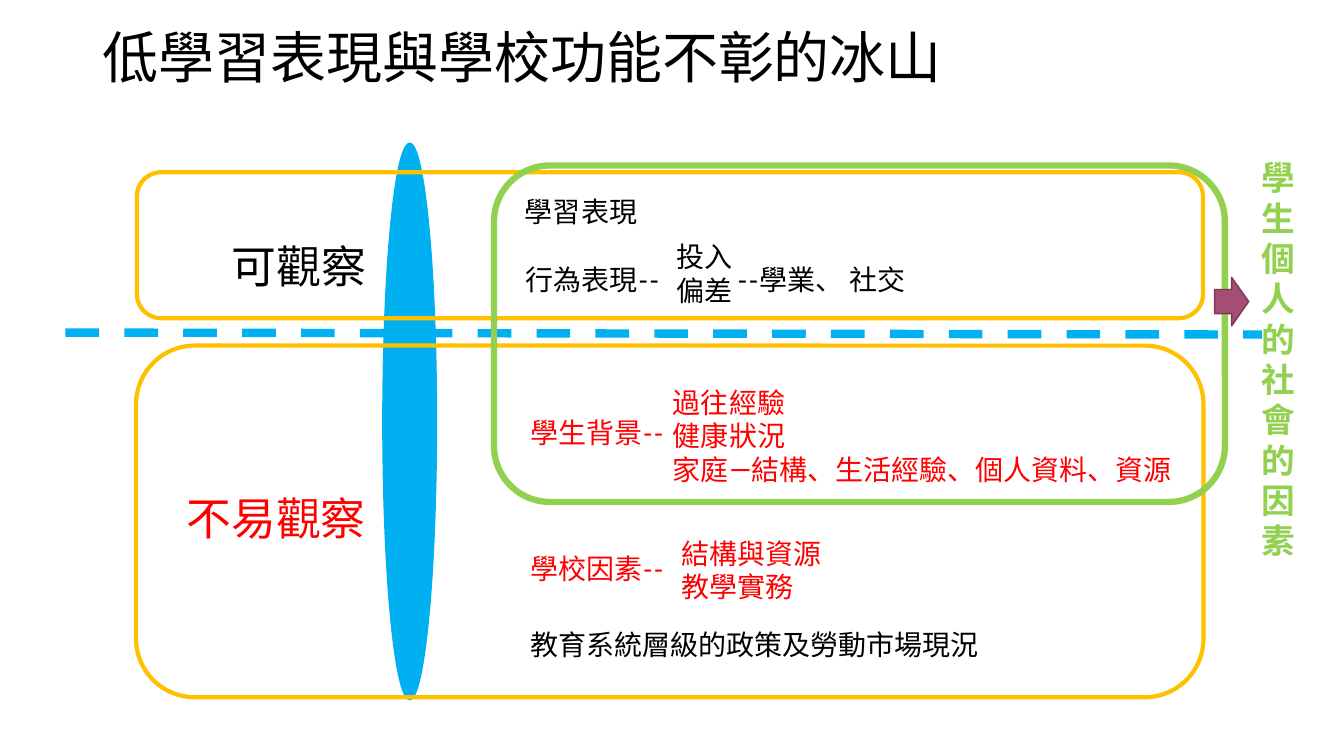
from dataclasses import dataclass
from itertools import groupby

from lxml import etree
from pptx import Presentation
from pptx.dml.color import RGBColor
from pptx.enum.dml import MSO_LINE
from pptx.enum.shapes import MSO_CONNECTOR, MSO_SHAPE
from pptx.enum.text import MSO_ANCHOR
from pptx.oxml.ns import qn
from pptx.util import Cm, Pt

ELLIPSE = MSO_SHAPE.OVAL
ROUNDED = MSO_SHAPE.ROUNDED_RECTANGLE
ARROW = MSO_SHAPE.RIGHT_ARROW
STRAIGHT = MSO_CONNECTOR.STRAIGHT
DASH = MSO_LINE.DASH
MIDDLE = MSO_ANCHOR.MIDDLE
TOP = MSO_ANCHOR.TOP


@dataclass(frozen=True)
class Theme:
    black: str = "000000"
    red: str = "FF0000"
    blue: str = "00B0F0"
    gold: str = "FFC000"
    green: str = "92D050"
    plum: str = "A54D74"
    dark_plum: str = "7A3956"
    title_size: int = 40
    heading_size: int = 32
    side_size: int = 24
    body_size: int = 20
    title_font: str = "Noto Sans CJK JP"
    heading_font: str = "Noto Sans CJK SC"
    body_font: str = "Roboto Slab"
    mark_font: str = "Noto Sans CJK TC"


THEME = Theme()


def add_span(para, text, font, size, color, bold):
    span = para.add_run()
    span.text = text
    span.font.name = font
    span.font.size = Pt(size)
    span.font.bold = bold
    span.font.color.rgb = RGBColor.from_string(color)
    east_asian = etree.SubElement(span.font._element, qn("a:ea"))
    east_asian.set("typeface", font)


def add_text(page, place, lines, color=THEME.black, size=THEME.body_size,
             font=THEME.body_font, bold=False, anchor=TOP):
    box = page.shapes.add_textbox(*map(Cm, place))
    frame = box.text_frame
    frame.word_wrap = True
    frame.vertical_anchor = anchor
    for index, line in enumerate(lines):
        para = frame.paragraphs[0] if index == 0 else frame.add_paragraph()
        for is_mark, letters in groupby(line, lambda letter: letter in "、 "):
            span_font = THEME.mark_font if is_mark else font
            add_span(para, "".join(letters), span_font, size, color, bold)
    return box


def add_heading(page, place, text, color):
    add_text(page, place, [text], color, THEME.heading_size, THEME.heading_font)


def add_tab_stop(box, position):
    properties = box.text_frame.paragraphs[0]._p.get_or_add_pPr()
    stops = etree.SubElement(properties, qn("a:tabLst"))
    etree.SubElement(stops, qn("a:tab"), pos=str(Cm(position)), algn="l")


def add_figure(page, kind, place, line_color, line_width, fill=None):
    figure = page.shapes.add_shape(kind, *map(Cm, place))
    figure.shadow.inherit = False
    figure.line.color.rgb = RGBColor.from_string(line_color)
    figure.line.width = Pt(line_width)
    if fill:
        figure.fill.solid()
        figure.fill.fore_color.rgb = RGBColor.from_string(fill)
    else:
        figure.fill.background()


def add_waterline(page, ends):
    line = page.shapes.add_connector(STRAIGHT, *map(Cm, ends))
    line.line.color.rgb = RGBColor.from_string(THEME.blue)
    line.line.width = Pt(6)
    line.line.dash_style = DASH
    etree.SubElement(line._element.spPr, qn("a:effectLst"))


def add_title(page):
    title = add_text(page, (2.34, 0.56, 29.21, 1.93), ["低學習表現與學校功能不彰的冰山"],
                     size=THEME.title_size, font=THEME.title_font, anchor=MIDDLE)
    title.text_frame.paragraphs[0].line_spacing = 0.9


def add_observable(page):
    add_heading(page, (5.59, 5.89, 4.57, 1.63), "可觀察", THEME.black)
    add_text(page, (12.98, 4.78, 4.04, 1.12), ["學習表現"])
    behaviour = add_text(page, (13, 6.48, 10.62, 1.12), ["行為表現--\t--學業、 社交"])
    add_tab_stop(behaviour, 5.33)
    add_text(page, (16.79, 5.92, 2.08, 1.96), ["投入偏差"])


def add_hidden(page):
    add_heading(page, (4.45, 12.24, 5.31, 1.63), "不易觀察", THEME.red)
    add_text(page, (13.11, 10.34, 4.04, 1.12), ["學生背景--"], THEME.red)
    add_text(page, (13.11, 13.77, 4.04, 1.12), ["學校因素--"], THEME.red)
    add_text(page, (13.11, 15.7, 12.42, 1.12), ["教育系統層級的政策及勞動市場現況"])
    background = ["過往經驗", "健康狀況", "家庭—結構、生活經驗、個人資料、資源"]
    add_text(page, (16.71, 9.58, 13.51, 2.82), background, THEME.red)
    add_text(page, (16.92, 13.39, 4.04, 1.96), ["結構與資源", "教學實務"], THEME.red)


def add_frames(page):
    add_figure(page, ROUNDED, (3.45, 4.34, 26.87, 3.68), THEME.gold, 3)
    add_figure(page, ROUNDED, (3.43, 8.71, 26.9, 8.86), THEME.gold, 3)
    add_figure(page, ROUNDED, (12.45, 4.17, 18.42, 8.48), THEME.green, 4.5)


def main():
    deck = Presentation()
    deck.slide_width, deck.slide_height = Cm(33.87), Cm(19.05)
    page = deck.slides.add_slide(deck.slide_layouts[6])
    add_title(page)
    add_figure(page, ELLIPSE, (9.65, 3.61, 1.35, 14.02), THEME.blue, 1, THEME.blue)
    add_waterline(page, (1.65, 8.38, 31.8, 8.43))
    add_observable(page)
    add_hidden(page)
    add_text(page, (31.55, 3.84, 1.4, 10.52), ["學生個人的社會的因素"], THEME.green,
             THEME.side_size, THEME.heading_font, bold=True)
    add_frames(page)
    add_figure(page, ARROW, (30.61, 6.99, 0.86, 1.22), THEME.dark_plum, 1, THEME.plum)
    deck.save("out.pptx")


if __name__ == "__main__":
    main()
